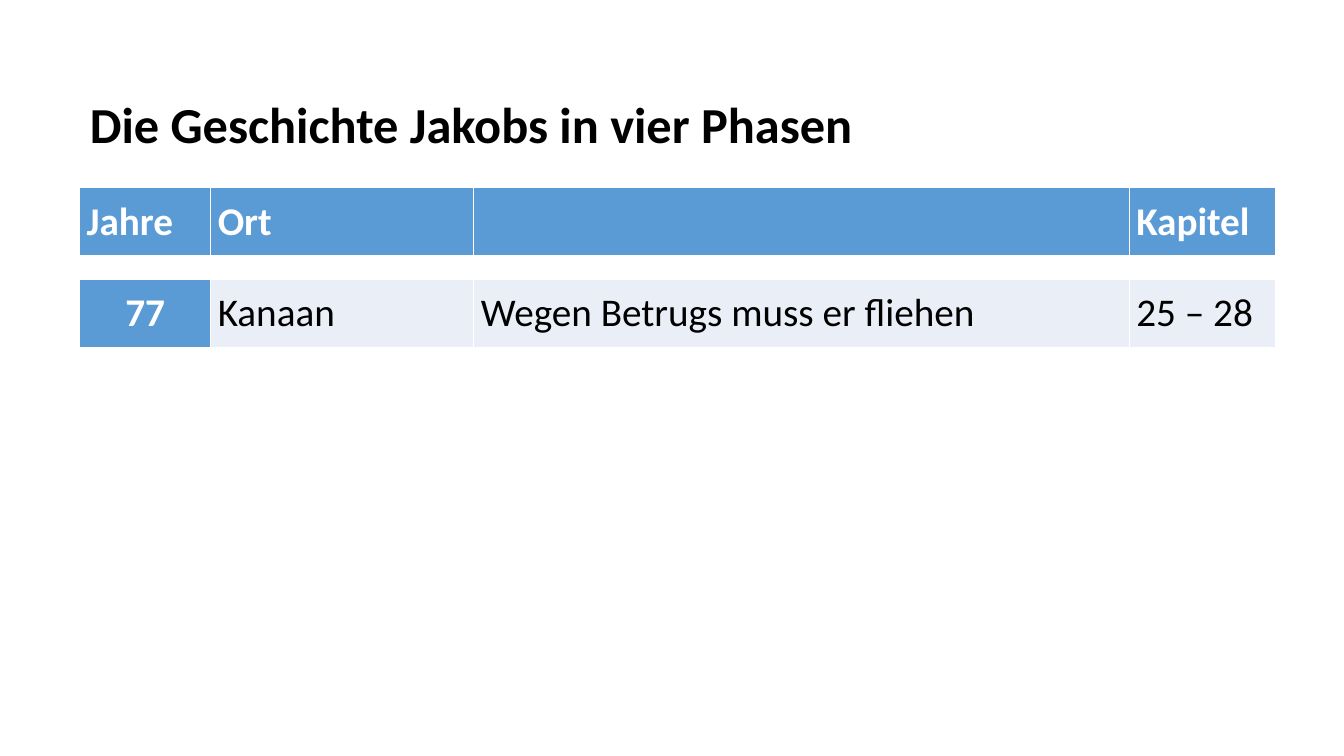
from pptx import Presentation
from pptx import util as u
from pptx.dml.color import RGBColor
from pptx.enum import text
from pptx.oxml import parse_xml
from pptx.oxml.ns import nsdecls
from pptx.oxml.xmlchemy import OxmlElement

HUES = {"ink": "000000", "white": "FFFFFF", "blue": "5B9BD5", "pale": "EAEFF7"}
COLS = [1.3, 2.61, 6.5, 1.45]
ROWS = [0.68, 0.23, 0.68]
HEAD = ["Jahre", "Ort", "", "Kapitel"]
PHASE = ["77", "Kanaan", "Wegen Betrugs muss er fliehen", "25 – 28"]


class Deck:
    face = "Calibri"

    def __init__(self):
        self.show = Presentation()
        self.show.slide_width = u.Inches(13.33)
        self.show.slide_height = u.Inches(7.5)
        self.slide = self.show.slides.add_slide(self.show.slide_layouts[5])

    def hue(self, name):
        return RGBColor.from_string(HUES[name])

    def style(self, para, size, name, bold):
        for run in para.runs:
            run.font.name = self.face
            run.font.size = u.Pt(size)
            run.font.bold = bold
            run.font.color.rgb = self.hue(name)

    def title(self, words, box):
        shape = self.slide.shapes.title
        shape.left, shape.top, shape.width, shape.height = map(u.Inches, box)
        frame = shape.text_frame
        frame.text = words
        frame.word_wrap = False
        frame.auto_size = text.MSO_AUTO_SIZE.SHAPE_TO_FIT_TEXT
        frame.vertical_anchor = text.MSO_ANCHOR.TOP
        para = frame.paragraphs[0]
        para.alignment = text.PP_ALIGN.LEFT
        self.style(para, 36, "ink", True)

    def table(self, left, top, cols, rows):
        frame = self.slide.shapes.add_table(
            len(rows), len(cols), u.Inches(left), u.Inches(top),
            u.Inches(sum(cols)), u.Inches(sum(rows)))
        grid = frame.table
        grid.first_row = grid.horz_banding = False
        for col, width in zip(grid.columns, cols):
            col.width = u.Inches(width)
        for row, height in zip(grid.rows, rows):
            row.height = u.Inches(height)
        return grid

    def edge(self, cell, sides):
        props = cell._tc.get_or_add_tcPr()
        for spot, side in enumerate(sides):
            props.insert(spot, parse_xml(
                f'<a:ln{side} {nsdecls("a")} w="12700"><a:solidFill>'
                f'<a:srgbClr val="{HUES["white"]}"/></a:solidFill></a:ln{side}>'))

    def cell(self, cell, words, fill, ink, bold, sides):
        cell.margin_left = cell.margin_right = u.Inches(0.07)
        cell.margin_top = cell.margin_bottom = 0
        cell.vertical_anchor = text.MSO_ANCHOR.MIDDLE
        cell.fill.solid()
        cell.fill.fore_color.rgb = self.hue(fill)
        self.edge(cell, sides)
        para = cell.text_frame.paragraphs[0]
        if words:
            para.text = words
            self.style(para, 28, ink, bold)
        else:
            end = OxmlElement("a:endParaRPr")
            end.set("sz", "800")
            para._p.append(end)
        return para


def main():
    deck = Deck()
    deck.title("Die Geschichte Jakobs in vier Phasen", (0.79, 0.87, 7.85, 0.71))
    grid = deck.table(0.79, 1.86, COLS, ROWS)
    for col, (head, fact) in enumerate(zip(HEAD, PHASE)):
        deck.cell(grid.cell(0, col), head, "blue", "white", True, "LRT")
        deck.cell(grid.cell(1, col), "", "white", "ink", False, "")
        first = col == 0
        fill, ink = ("blue", "white") if first else ("pale", "ink")
        para = deck.cell(grid.cell(2, col), fact, fill, ink, first, "LRB")
        if first:
            para.alignment = text.PP_ALIGN.CENTER
    deck.show.save("out.pptx")


if __name__ == "__main__":
    main()
